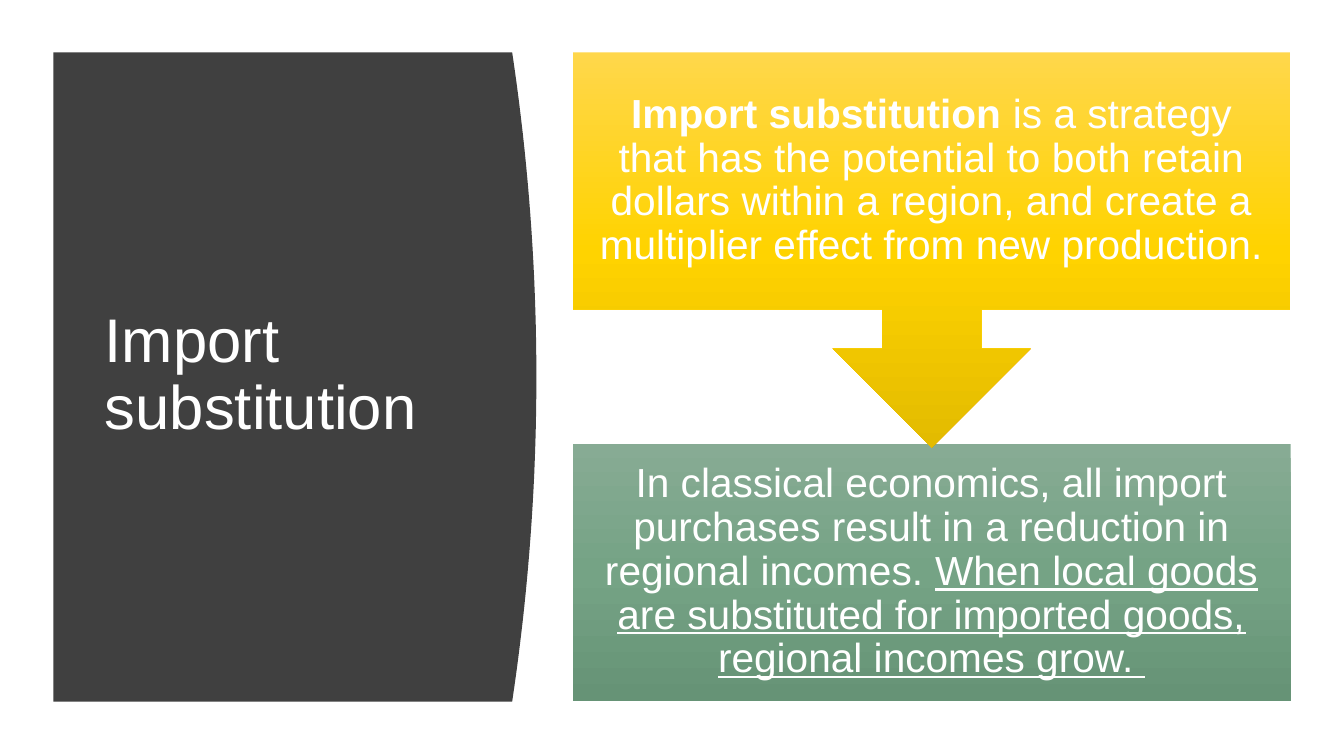
from copy import deepcopy

from pptx import Presentation
from pptx.dml.color import RGBColor
from pptx.enum import shapes, text
from pptx.oxml.ns import qn
from pptx.util import Inches, Pt

WHITE = RGBColor(0xFF, 0xFF, 0xFF)
CHARCOAL = RGBColor(0x40, 0x40, 0x40)
GOLDS = [RGBColor(0xFF, 0xD7, 0x4B), RGBColor(0xFF, 0xD3, 0x00), RGBColor(0xE3, 0xBB, 0x00)]
GREENS = [RGBColor(0x87, 0xAB, 0x94), RGBColor(0x75, 0xA3, 0x85), RGBColor(0x66, 0x93, 0x76)]

TOP, BOTTOM = 0.52, 6.96
PANEL_LEFT, PANEL_EDGE, PANEL_BULGE = 0.53, 5.08, 0.24
CURVE_STEPS = 40
BOX_LEFT, BOX_WIDTH = 5.68, 7.12


def set_attributes(target, values):
    for name, value in values.items():
        setattr(target, name, value)


def write_text(shape, runs, size, alignment, inset):
    frame = shape.text_frame
    margins = ("margin_left", "margin_top", "margin_right", "margin_bottom")
    set_attributes(frame, dict(zip(margins, inset)))
    set_attributes(frame, {
        "word_wrap": True,
        "auto_size": text.MSO_AUTO_SIZE.NONE,
        "vertical_anchor": text.MSO_ANCHOR.MIDDLE,
    })
    paragraph = frame.paragraphs[0]
    set_attributes(paragraph, {"alignment": alignment, "line_spacing": 0.9})
    for wording, style in runs:
        run = paragraph.add_run()
        run.text = wording
        set_attributes(run.font, {"name": "Arial", "size": Pt(size), **style})
        run.font.color.rgb = WHITE


def fill_gradient(shape, colors):
    shape.fill.gradient()
    shape.fill.gradient_angle = 270
    stop_list = shape._element.spPr.find(qn("a:gradFill")).find(qn("a:gsLst"))
    stop_list.append(deepcopy(stop_list[0]))
    for index, (stop, color) in enumerate(zip(shape.fill.gradient_stops, colors)):
        stop.position = index / (len(colors) - 1)
        stop.color.rgb = color


def add_curved_panel(slide):
    middle, half = (TOP + BOTTOM) / 2, (BOTTOM - TOP) / 2
    curve = []
    for step in range(CURVE_STEPS + 1):
        offset = 2 * step / CURVE_STEPS - 1
        x = PANEL_EDGE + PANEL_BULGE * (1 - offset ** 2)
        curve.append((Inches(x), Inches(middle + half * offset)))
    builder = slide.shapes.build_freeform(Inches(PANEL_LEFT), Inches(TOP))
    builder.add_line_segments(curve + [(Inches(PANEL_LEFT), Inches(BOTTOM))])
    panel = builder.convert_to_shape()
    panel.shadow.inherit = False
    panel.fill.solid()
    panel.fill.fore_color.rgb = CHARCOAL
    panel.line.fill.background()


def place_title(slide, wording):
    title = slide.shapes.title
    set_attributes(title, {"left": Inches(0.94), "top": Inches(1.11),
                           "width": Inches(3.74), "height": Inches(5.24)})
    write_text(title, [(wording, {})], 44, text.PP_ALIGN.LEFT,
               [Inches(0.1), Inches(0.05)] * 2)
    slide.shapes._spTree.append(title._element)


def add_step(slide, kind, top, height, colors, runs):
    step = slide.shapes.add_shape(kind, Inches(BOX_LEFT), Inches(top),
                                  Inches(BOX_WIDTH), Inches(height))
    step.shadow.inherit = False
    step.line.fill.background()
    fill_gradient(step, colors)
    write_text(step, runs, 29, text.PP_ALIGN.CENTER, [Inches(0.23)] * 4)


def main():
    presentation = Presentation()
    set_attributes(presentation, {"slide_width": Inches(13.33), "slide_height": Inches(7.5)})
    slide = presentation.slides.add_slide(presentation.slide_layouts[5])
    add_curved_panel(slide)
    place_title(slide, "Import substitution")
    add_step(slide, shapes.MSO_SHAPE.RECTANGLE, 4.4, 2.55, GREENS, [
        ("In classical economics, all import purchases result in a reduction "
         "in regional incomes. ", {}),
        ("When local goods are substituted for imported goods, "
         "regional incomes grow. ", {"underline": True}),
    ])
    add_step(slide, shapes.MSO_SHAPE.DOWN_ARROW_CALLOUT, TOP, 3.92, GOLDS, [
        ("Import substitution ", {"bold": True}),
        ("is a strategy that has the potential to both retain dollars within "
         "a region, and create a multiplier effect from new production. ", {}),
    ])
    presentation.save("out.pptx")


if __name__ == "__main__":
    main()
